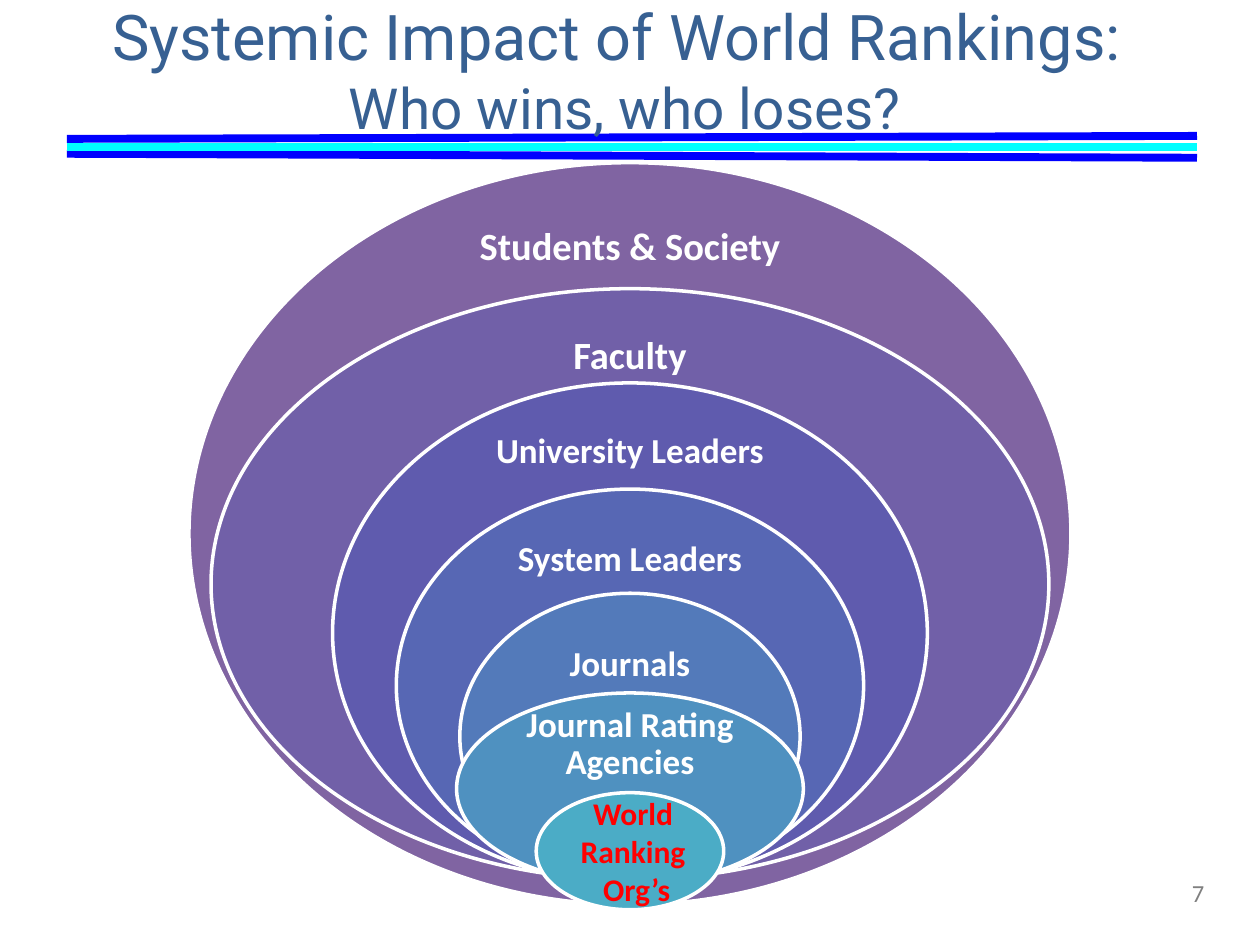
import pptx
import pptx.util
import pptx.dml.color
import pptx.enum.shapes
import pptx.enum.text
import pptx.oxml

Cm = pptx.util.Cm
Pt = pptx.util.Pt
Align = pptx.enum.text.PP_ALIGN
Anchor = pptx.enum.text.MSO_ANCHOR
MID = 12.7  # centre line of the rings

hues = {
    "title": "376092", "blue": "0000FF", "cyan": "00FFFF",
    "white": "FFFFFF", "red": "FF0000", "grey": "808080",
    "society": "8064A2", "faculty": "7160A8", "campus": "5F5BAE",
    "system": "5767B4", "journal": "537ABA", "rating": "4F91C0",
    "world": "4BACC6",
}


def rgb(name):
    return pptx.dml.color.RGBColor.from_string(hues[name])


def write(box, lines, font, hue, bold=False, align=Align.CENTER,
          anchor=Anchor.MIDDLE, pad=0.0, ratio=None, breaks=False):
    """Add a text box; lines are (text, size), split by breaks or paragraphs."""
    frame = slide.shapes.add_textbox(*[Cm(n) for n in box]).text_frame
    frame.word_wrap = True
    frame.vertical_anchor = anchor
    frame.margin_left = frame.margin_right = Cm(2 * pad)
    frame.margin_top = frame.margin_bottom = Cm(pad)
    para = frame.paragraphs[0]
    for i, (text, size) in enumerate(lines):
        if i and breaks:
            para.add_line_break()
        elif i:
            para = frame.add_paragraph()
        para.alignment = align
        if ratio:
            para.line_spacing = ratio
        run = para.add_run()
        run.text = text
        run.font.name = font
        run.font.size = Pt(size)
        run.font.bold = bold
        run.font.color.rgb = rgb(hue)


deck = pptx.Presentation()
deck.slide_width = Cm(25.4)
deck.slide_height = Cm(19.05)
slide = deck.slides.add_slide(deck.slide_layouts[6])

# Triple rule under the title: start height, end height, colour
for start, end, hue in [(3.1, 3.18, "blue"), (2.8, 2.74, "blue"),
                        (2.97, 2.97, "cyan")]:
    rule = slide.shapes.add_connector(
        pptx.enum.shapes.MSO_CONNECTOR.STRAIGHT,
        Cm(1.35), Cm(start), Cm(24.13), Cm(end))
    rule.line.color.rgb = rgb(hue)
    rule.line.width = Pt(4.5)
    rule._element.spPr.append(pptx.oxml.parse_xml(
        '<a:effectLst xmlns:a='
        '"http://schemas.openxmlformats.org/drawingml/2006/main"/>'))

write((0.43, -0.2, 24.33, 3.18),
      [("Systemic Impact of World Rankings: ", 36),
       ("Who wins, who loses?", 32.4)],
      "Roboto", "title", pad=0.13, breaks=True)
write((18.62, 17.48, 5.92, 1.02), [("7", 14)], "Calibri", "grey",
      align=Align.RIGHT, pad=0.13)

# Rings: colour, top, width, height, label, size, label centre, label width
rings = [
    ("society", 3.28, 17.78, 14.96, "Students & Society", 22, 5.0, 7.57),
    ("faculty", 5.82, 16.89, 11.91, "Faculty", 22, 7.19, 7.95),
    ("campus", 7.72, 11.99, 10.08, "University Leaders", 20, 9.12, 6.35),
    ("system", 9.86, 9.42, 7.92, "System Leaders", 20, 11.29, 5.0),
    ("journal", 11.96, 6.86, 5.77, "Journals", 20, 13.41, 4.06),
    ("rating", 13.97, 6.99, 3.86, "Journal Rating Agencies", 20, 15.01, 4.7),
    ("world", 15.98, 3.78, 2.36, None, None, None, None),
]
for hue, top, wide, high, label, size, level, span in rings:
    ring = slide.shapes.add_shape(
        pptx.enum.shapes.MSO_SHAPE.OVAL,
        Cm(MID - wide / 2), Cm(top), Cm(wide), Cm(high))
    ring.shadow.inherit = False
    ring.fill.solid()
    ring.fill.fore_color.rgb = rgb(hue)
    ring.line.color.rgb = rgb("white")
    ring.line.width = Pt(2)
    if label:
        write((MID - span / 2, level - 0.8, span, 1.6), [(label, size)],
              "Calibri", "white", bold=True, ratio=0.9)

write((11.07, 15.88, 3.53, 2.57),
      [("World ", 18), ("Ranking ", 18), ("Org’s", 18)],
      "Calibri", "red", bold=True, anchor=Anchor.TOP, pad=0.13)

deck.save("out.pptx")
